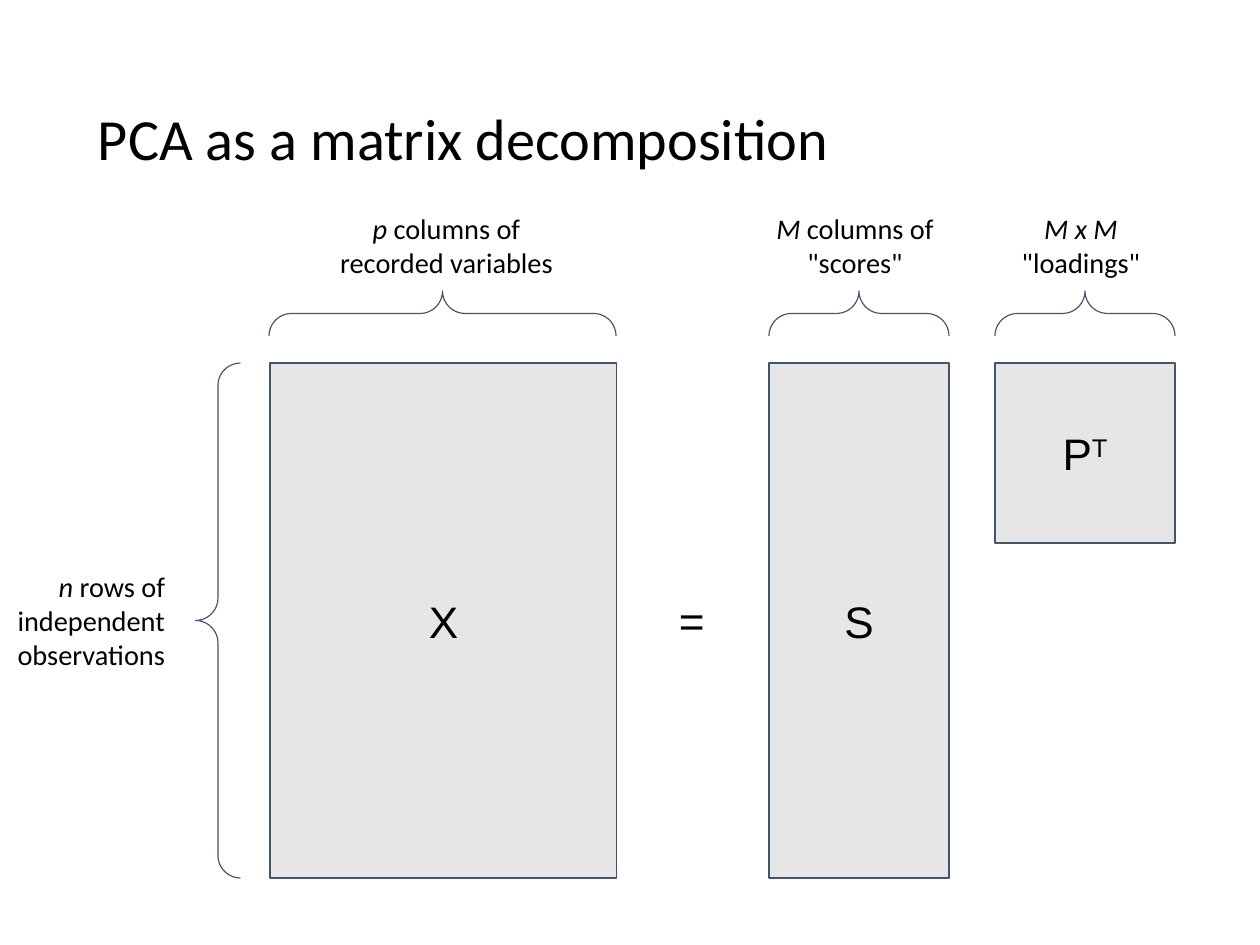
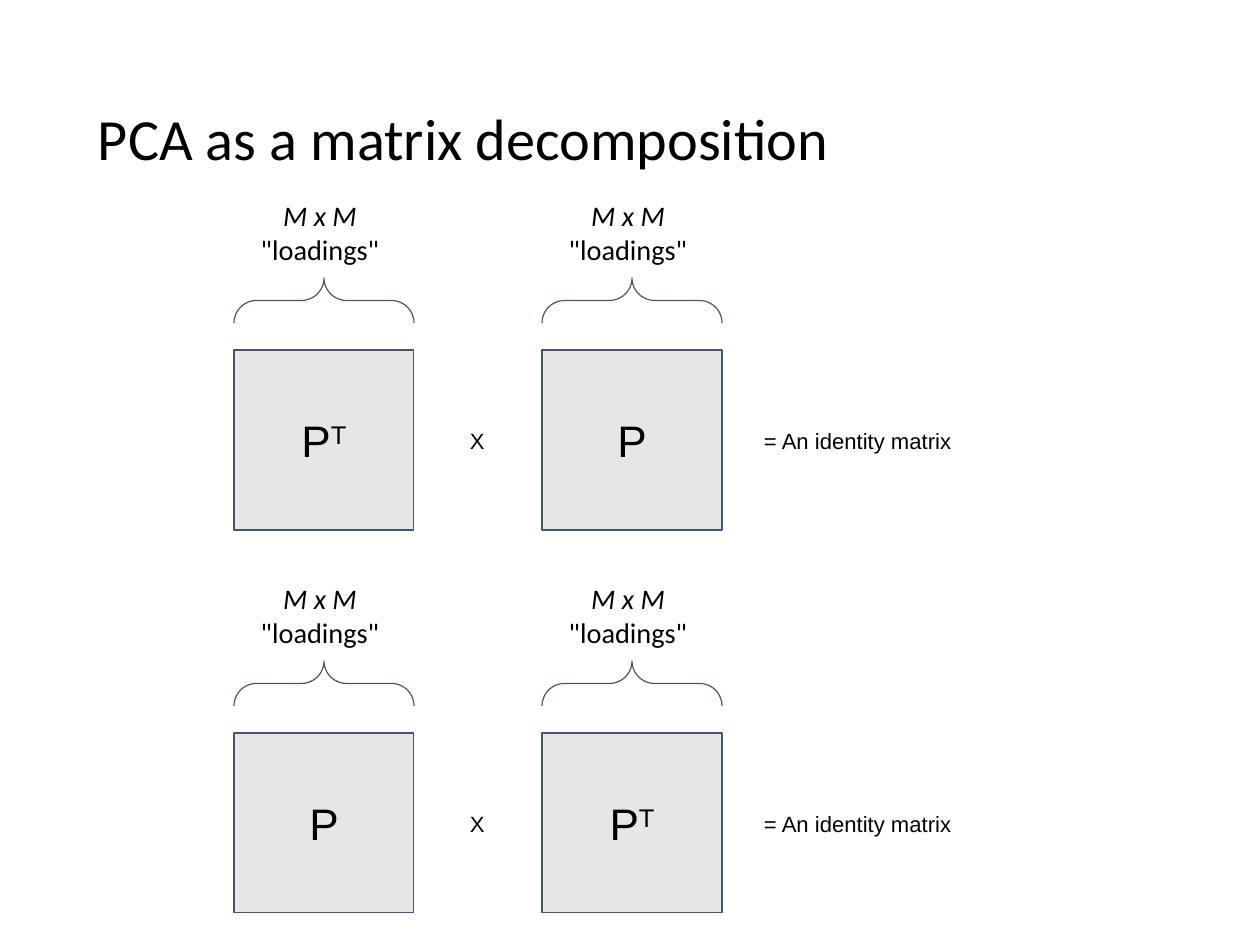
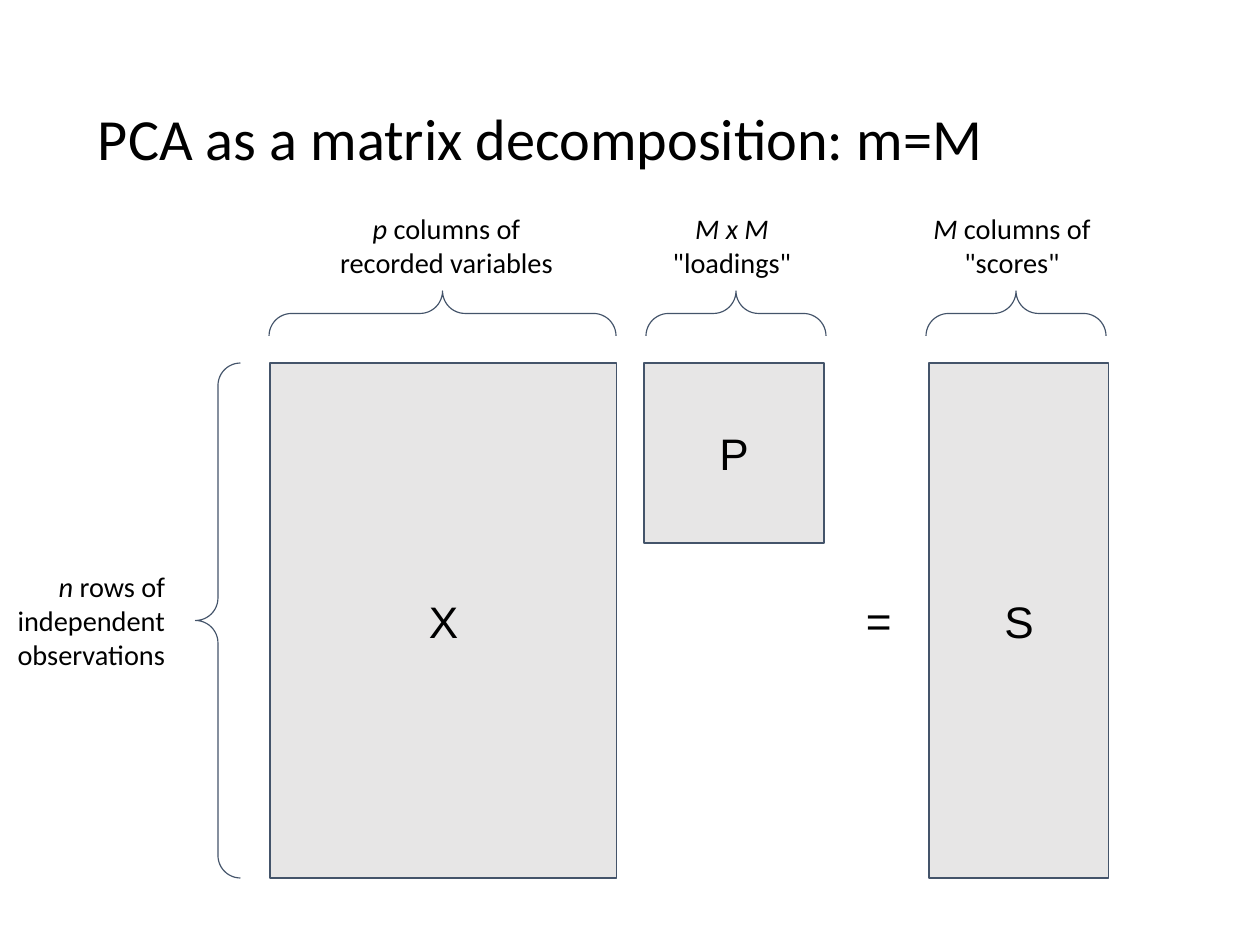
from pptx import Presentation
from pptx.dml.color import RGBColor
from pptx.enum.shapes import MSO_SHAPE
from pptx.enum.text import MSO_ANCHOR, PP_ALIGN
from pptx.util import Pt

RECTANGLE, LEFT_BRACE = MSO_SHAPE.RECTANGLE, MSO_SHAPE.LEFT_BRACE
TOP, MIDDLE = MSO_ANCHOR.TOP, MSO_ANCHOR.MIDDLE
LEFT, CENTER, RIGHT = PP_ALIGN.LEFT, PP_ALIGN.CENTER, PP_ALIGN.RIGHT

# Shared scale, colours and fonts
WIDTH, HEIGHT = 1260, 945
PX = 10160000 / WIDTH
INK, MATRIX_FILL, OUTLINE = "000000", "E7E6E6", "44546A"
BODY, SYMBOL = "Calibri", "Arial"

# Shared measures in px
BRACE_DEPTH = 45
BRACE_RISE = 72      # top of a column brace above its matrix
HEADING_RISE = 163   # top of a heading above its matrix
X_WIDTH, SIDE, TALL = 347, 180, 515
MAIN_TOP = 363

# Text between underscores is italic, text after a caret is raised
VARIABLES = "_p_ columns of\nrecorded variables"
SCORES = '_M_ columns of\n"scores"'
LOADINGS = '_M x M_\n"loadings"'
OBSERVATIONS = "_n_ rows of\nindependent observations"


def emu(px):
    return round(px * PX)


def put_text(slide, text, x, y, w, h, size=18, font=BODY, align=LEFT, anchor=TOP,
             inset=(11, 11), wrap=True, spacing=1.0, fill=None):
    box = [emu(v) for v in (x, y, w, h)]
    if fill:
        holder = slide.shapes.add_shape(RECTANGLE, *box)
        holder.shadow.inherit = False
        holder.fill.solid()
        holder.fill.fore_color.rgb = RGBColor.from_string(fill)
        holder.line.color.rgb = RGBColor.from_string(OUTLINE)
        holder.line.width = Pt(0.75)
    else:
        holder = slide.shapes.add_textbox(*box)
    frame = holder.text_frame
    frame.word_wrap = wrap
    frame.vertical_anchor = anchor
    frame.margin_left = frame.margin_right = emu(inset[0])
    frame.margin_top = frame.margin_bottom = emu(inset[1])
    for number, line in enumerate(text.split("\n")):
        paragraph = frame.add_paragraph() if number else frame.paragraphs[0]
        paragraph.alignment = align
        paragraph.line_spacing = spacing
        base, _, raised = line.partition("^")
        parts = [(part, i % 2 == 1, False) for i, part in enumerate(base.split("_"))]
        for part, italic, is_raised in parts + [(raised, False, True)]:
            if not part:
                continue
            run = paragraph.add_run()
            run.text = part
            run.font.size = Pt(size)
            run.font.name = font
            run.font.italic = italic
            run.font.color.rgb = RGBColor.from_string(INK)
            if is_raised:
                run.font._element.set("baseline", "30000")


def put_brace(slide, center_x, center_y, length, rotation=0):
    brace = slide.shapes.add_shape(
        LEFT_BRACE, emu(center_x - BRACE_DEPTH / 2), emu(center_y - length / 2),
        emu(BRACE_DEPTH), emu(length))
    brace.rotation = rotation
    brace.adjustments[0] = 0.5
    brace.shadow.inherit = False
    brace.fill.background()
    brace.line.color.rgb = RGBColor.from_string(OUTLINE)
    brace.line.width = Pt(0.75)


# Matrix: name, heading, x, y, width, height, brace shift, heading shift from brace
x_matrix = ("X", VARIABLES, 270, MAIN_TOP, X_WIDTH, TALL, -1, 4)

# Sign: text, x, y, width, height, size
identity_matrices, identity_signs = [], []
for row_top, names in ((350, ("P^T", "P")), (733, ("P", "P^T"))):
    for name, x in zip(names, (234, 542)):
        identity_matrices.append((name, LOADINGS, x, row_top, SIDE, SIDE, 0, -4))
    identity_signs += [("X", 459, row_top + 72, 37, 39, 14),
                       ("= An identity matrix", 753, row_top + 72, 212, 39, 14)]

# Slide: title, matrices, signs, whether the rows of X are labelled
SLIDES = [
    ("PCA as a matrix decomposition",
     [x_matrix,
      ("S", SCORES, 769, MAIN_TOP, SIDE, TALL, 0, -4),
      ("P^T", LOADINGS, 995, MAIN_TOP, SIDE, SIDE, 0, -4)],
     [("=", 668, 587, 49, 65, 28)], True),
    ("PCA as a matrix decomposition", identity_matrices, identity_signs, False),
    ("PCA as a matrix decomposition: m=M",
     [x_matrix,
      ("P", LOADINGS, 644, MAIN_TOP, SIDE, SIDE, 2, -4),
      ("S", SCORES, 929, MAIN_TOP, SIDE, TALL, -3, -4)],
     [("=", 855, 587, 49, 65, 28)], True),
]

prs = Presentation()
prs.slide_width, prs.slide_height = emu(WIDTH), emu(HEIGHT)

for title, matrices, signs, rows_labelled in SLIDES:
    slide = prs.slides.add_slide(prs.slide_layouts[6])
    put_text(slide, title, 86, 50, 1086, 183, size=37, anchor=MIDDLE,
             inset=(12, 12), spacing=0.9)

    # Matrices with their column braces and headings
    for name, heading, x, y, w, h, brace_shift, heading_shift in matrices:
        put_text(slide, name, x, y, w, h, size=28, font=SYMBOL, align=CENTER,
                 anchor=MIDDLE, fill=MATRIX_FILL)
        middle = x + w / 2 + brace_shift
        put_brace(slide, middle, y - BRACE_RISE + BRACE_DEPTH / 2, w, rotation=90)
        put_text(slide, heading, middle + heading_shift - 140, y - HEADING_RISE,
                 280, 92, align=CENTER)

    # Row brace and label
    if rows_labelled:
        put_brace(slide, 218, MAIN_TOP + TALL / 2, TALL)
        put_text(slide, OBSERVATIONS, 0, 558, 176, 125, align=RIGHT)

    # Signs between and after the matrices
    for sign, x, y, w, h, size in signs:
        put_text(slide, sign, x, y, w, h, size=size, font=SYMBOL,
                 inset=(11, 6), wrap=False)

prs.save("out.pptx")
